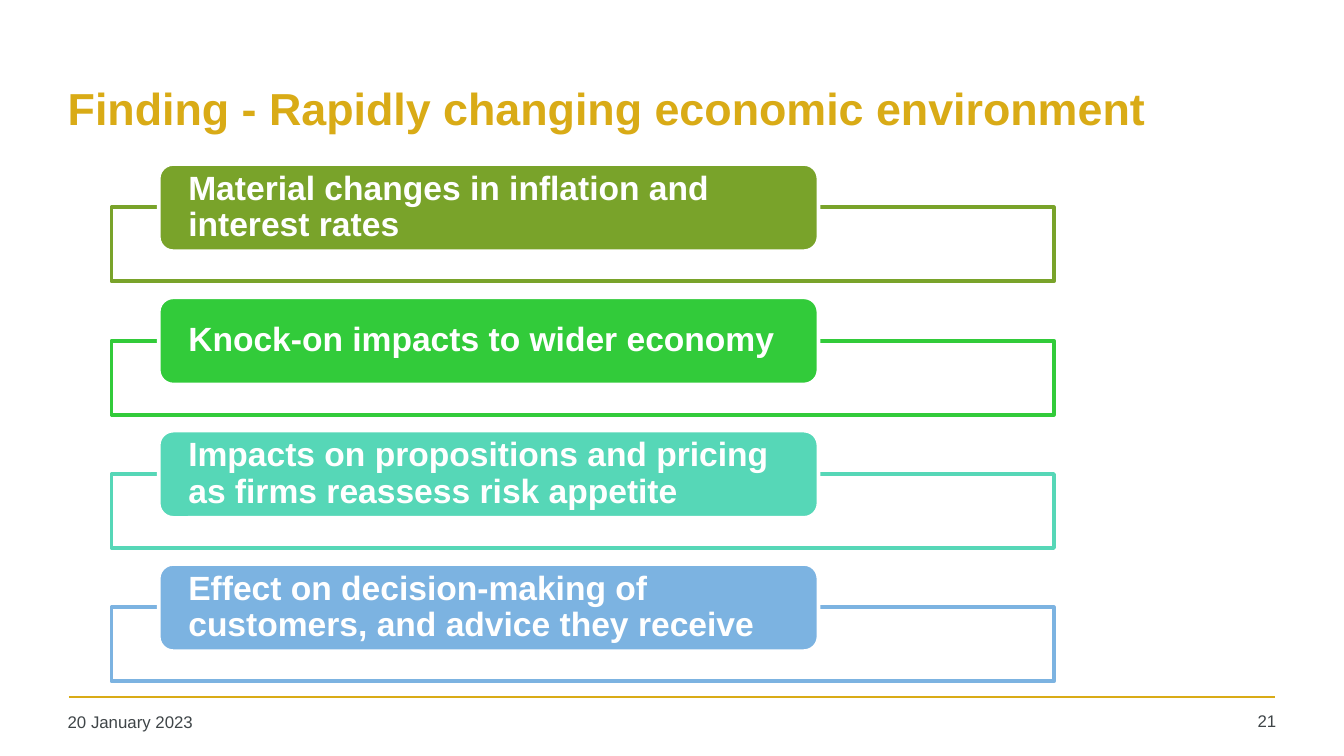
from lxml import etree
from pptx import Presentation
from pptx.dml.color import RGBColor
from pptx.enum.shapes import MSO_CONNECTOR, MSO_SHAPE
from pptx.enum.text import MSO_ANCHOR, PP_ALIGN
from pptx.oxml.ns import qn
from pptx.util import Cm, Pt

STRAIGHT = MSO_CONNECTOR.STRAIGHT
RECTANGLE, ROUNDED = MSO_SHAPE.RECTANGLE, MSO_SHAPE.ROUNDED_RECTANGLE
MIDDLE = MSO_ANCHOR.MIDDLE
LEFT, RIGHT = PP_ALIGN.LEFT, PP_ALIGN.RIGHT

GOLD = RGBColor(0xD9, 0xAB, 0x16)
GREY = RGBColor(0x3F, 0x45, 0x48)
WHITE = RGBColor(0xFF, 0xFF, 0xFF)
OLIVE = RGBColor(0x79, 0xA3, 0x2A)
GREEN = RGBColor(0x32, 0xCB, 0x3A)
TEAL = RGBColor(0x56, 0xD7, 0xB7)
BLUE = RGBColor(0x7C, 0xB3, 0xE1)

FINDINGS = [
    ("Material changes in inflation and interest rates", OLIVE),
    ("Knock-on impacts to wider economy", GREEN),
    ("Impacts on propositions and pricing as firms reassess risk appetite", TEAL),
    ("Effect on decision-making of customers, and advice they receive", BLUE),
]
ROW_PITCH = 2.52


def write(shape, text, size, color, bold=False, align=LEFT, margins=(0.18, 0.1)):
    frame = shape.text_frame
    frame.word_wrap = True
    frame.margin_left = frame.margin_right = Cm(margins[0])
    frame.margin_top = frame.margin_bottom = Cm(margins[1])
    frame.text = text
    paragraph = frame.paragraphs[0]
    paragraph.alignment = align
    font = paragraph.runs[0].font
    font.name, font.size, font.bold = "Arial", Pt(size), bold
    font.color.rgb = color
    return frame


def add_box(kind, left, top, width, height, fill, line):
    shape = slide.shapes.add_shape(kind, Cm(left), Cm(top), Cm(width), Cm(height))
    shape.shadow.inherit = False
    shape.fill.solid()
    shape.fill.fore_color.rgb = fill
    shape.line.color.rgb = line
    shape.line.width = Pt(2)
    return shape


presentation = Presentation()
presentation.slide_width, presentation.slide_height = Cm(25.4), Cm(14.29)
slide = presentation.slides.add_slide(presentation.slide_layouts[5])

# Title
title = slide.shapes.title
title.left, title.top, title.width, title.height = Cm(1.1), Cm(0.84), Cm(23.03), Cm(2.39)
write(title, slide_title := "Finding - Rapidly changing economic environment", 24, GOLD, bold=True)
title.text_frame.vertical_anchor = MIDDLE

# Findings: an outlined panel with a coloured label on its top edge
for row, (text, color) in enumerate(FINDINGS):
    offset = row * ROW_PITCH
    add_box(RECTANGLE, 2.11, 3.92 + offset, 17.81, 1.4, WHITE, color)
    label = add_box(ROUNDED, 3, 3.1 + offset, 12.47, 1.65, color, WHITE)
    frame = write(label, text, 18, WHITE, bold=True, margins=(0.48, 0))
    frame.vertical_anchor = MIDDLE
    frame.paragraphs[0].line_spacing = 0.9

# Footer rule
rule = slide.shapes.add_connector(STRAIGHT, Cm(1.3), Cm(13.18), Cm(24.1), Cm(13.18))
rule.line.color.rgb = GOLD
rule.line.width = Pt(1)
etree.SubElement(rule._element.spPr, qn("a:effectLst"))

# Date and slide number
for text, left, top, width, align in [
    ("20 January 2023", 1.1, 13.36, 5.59, LEFT),
    ("21", 22.5, 13.34, 1.8, RIGHT),
]:
    footer = slide.shapes.add_textbox(Cm(left), Cm(top), Cm(width), Cm(0.7))
    write(footer, text, 9, GREY, align=align)

presentation.save("out.pptx")
